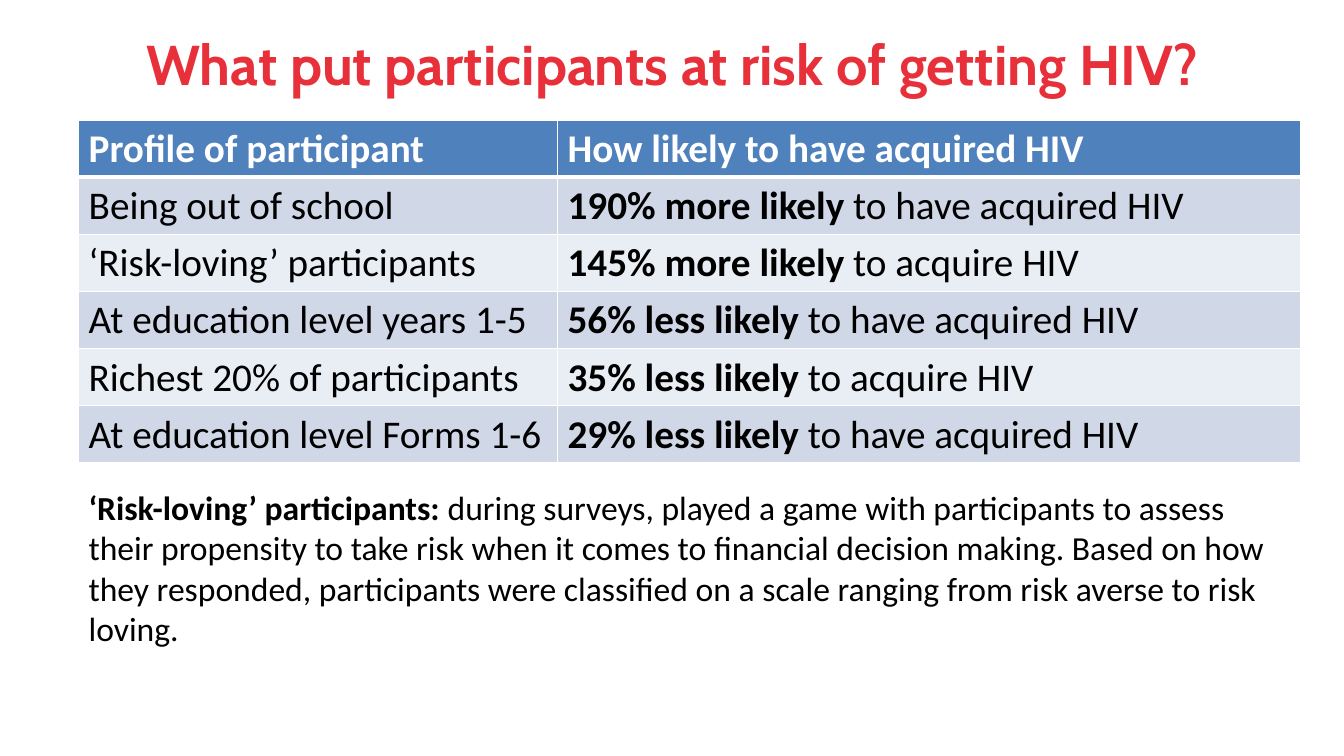
from lxml.etree import SubElement
from pptx import Presentation
from pptx.dml.color import RGBColor
from pptx.enum.text import MSO_ANCHOR as Anchor, PP_ALIGN as Align
from pptx.oxml.ns import qn
from pptx.util import Inches, Pt

WHITE, BLACK, RED = "FFFFFF", "000000", "E8303B"
HEADER_FILL, BAND_FILLS = "4F81BD", ("D0D8E8", "E9EDF4")
LEFT, WIDTH = 0.78, 12.12
COLUMN_WIDTHS = (4.75, 7.37)
HEADER_HEIGHT, ROW_HEIGHT = 0.56, 0.53

HEADINGS = ("Profile of participant", "How likely to have acquired HIV")
RISKS = (
    ("Being out of school", "190% more likely ", "to have acquired HIV"),
    ("‘Risk-loving’ participants", "145% more likely ", "to acquire HIV"),
    ("At education level years 1-5", "56% less likely ", "to have acquired HIV"),
    ("Richest 20% of participants", "35% less likely ", "to acquire HIV"),
    ("At education level Forms 1-6", "29% less likely ", "to have acquired HIV"),
)
NOTE_TERM = "‘Risk-loving’ participants: "
NOTE = (
    "during surveys, played a game with participants to assess their propensity "
    "to take risk when it comes to financial decision making. Based on how they "
    "responded, participants were classified on a scale ranging from risk averse "
    "to risk loving."
)


def color(value):
    """Turn a hex string into a colour."""
    return RGBColor.from_string(value)


def add_span(para, text, size, bold=False, fill=BLACK, font="Calibri"):
    """Add one formatted run to a paragraph."""
    span = para.add_run()
    span.text = text
    span.font.name = font
    span.font.size = Pt(size)
    span.font.bold = bold
    span.font.color.rgb = color(fill)


def add_box(page, left, top, width, height, anchor=Anchor.TOP):
    """Add a wrapping text box and return its first paragraph."""
    box = page.shapes.add_textbox(
        Inches(left), Inches(top), Inches(width), Inches(height)
    )
    box.text_frame.word_wrap = True
    box.text_frame.vertical_anchor = anchor
    return box.text_frame.paragraphs[0]


def set_borders(cell, top, bottom):
    """Give a cell white borders, with its own top and bottom widths."""
    properties = cell._tc.get_or_add_tcPr()
    for side, width in (("lnL", 1), ("lnR", 1), ("lnT", top), ("lnB", bottom)):
        line = SubElement(properties, qn(f"a:{side}"), w=str(Pt(width)))
        fill = SubElement(line, qn("a:solidFill"))
        SubElement(fill, qn("a:srgbClr"), val=WHITE)


def fill_cell(cell, spans, background, ink=BLACK, top=1, bottom=1):
    """Set the borders, fill and (text, bold) spans of a cell."""
    set_borders(cell, top, bottom)
    cell.fill.solid()
    cell.fill.fore_color.rgb = color(background)
    for text, bold in spans:
        add_span(cell.text_frame.paragraphs[0], text, 28, bold, ink)


def add_risk_table(page):
    """Add the table of participant profiles and their risk."""
    height = HEADER_HEIGHT + ROW_HEIGHT * len(RISKS)
    table = page.shapes.add_table(
        len(RISKS) + 1, len(HEADINGS),
        Inches(LEFT), Inches(1.19), Inches(WIDTH), Inches(height),
    ).table
    for column, width in zip(table.columns, COLUMN_WIDTHS):
        column.width = Inches(width)
    for index, row in enumerate(table.rows):
        row.height = Inches(ROW_HEIGHT if index else HEADER_HEIGHT)
    for index, heading in enumerate(HEADINGS):
        fill_cell(table.cell(0, index), [(heading, True)], HEADER_FILL, WHITE, bottom=3)
    for index, (profile, chance, outcome) in enumerate(RISKS):
        band = BAND_FILLS[index % 2]
        top = 1 if index else 3
        fill_cell(table.cell(index + 1, 0), [(profile, False)], band, top=top)
        fill_cell(
            table.cell(index + 1, 1), [(chance, True), (outcome, False)], band, top=top
        )


def main():
    """Build and save the slide."""
    deck = Presentation()
    deck.slide_width, deck.slide_height = Inches(13.33), Inches(7.5)
    page = deck.slides.add_slide(deck.slide_layouts[6])

    title = add_box(page, 0.82, 0, 11.69, 1.25, Anchor.MIDDLE)
    title.alignment = Align.CENTER
    add_span(title, "What put participants at risk of getting HIV?", 40, True, RED, "Cabin")

    add_risk_table(page)

    note = add_box(page, LEFT, 4.78, WIDTH, 1.72)
    add_span(note, NOTE_TERM, 24, True)
    add_span(note, NOTE, 24)
    deck.save("out.pptx")


if __name__ == "__main__":
    main()
